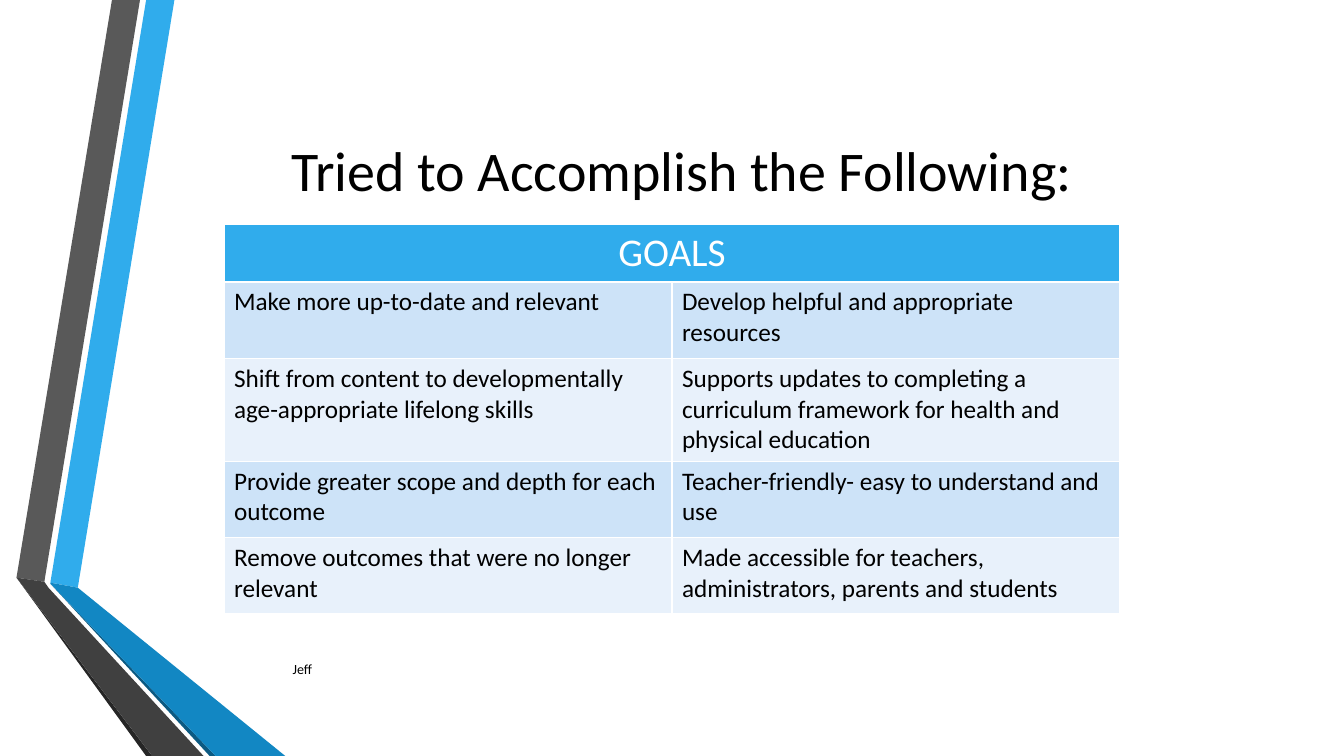
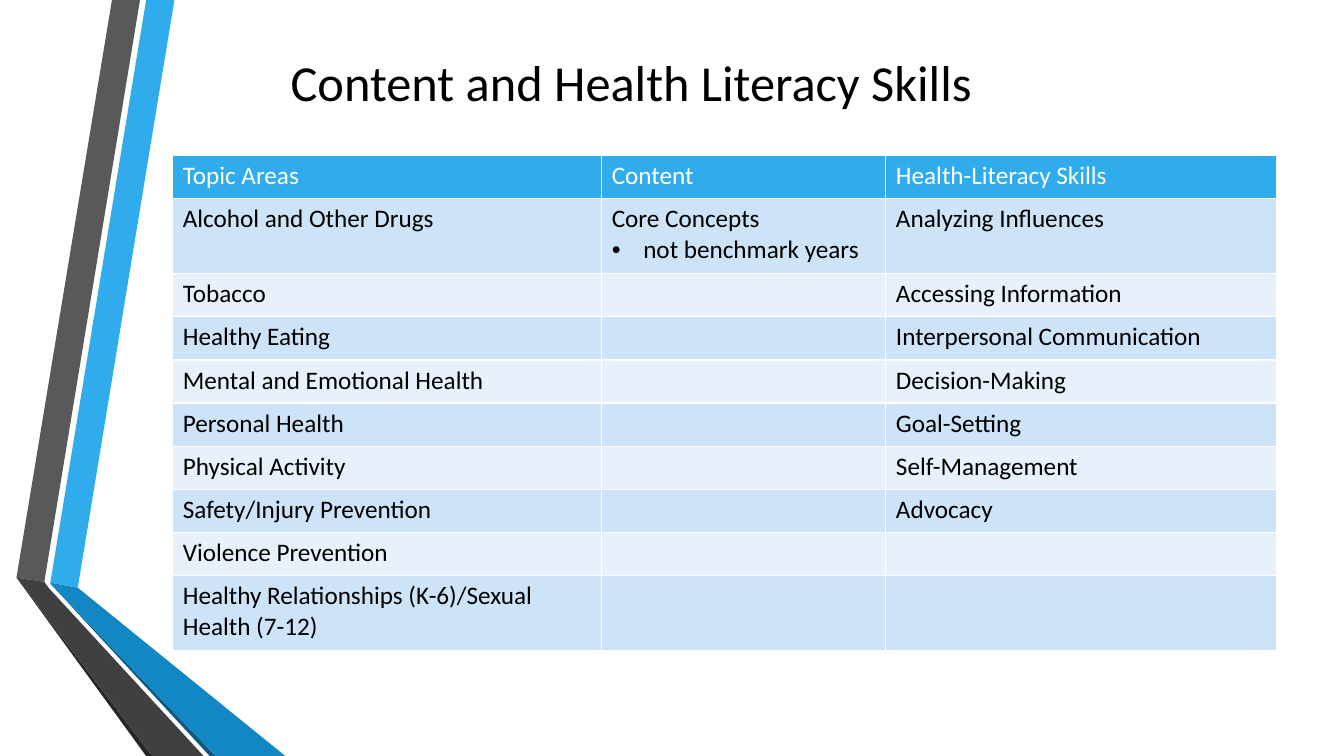
from lxml import etree
from pptx import Presentation
from pptx.dml.color import RGBColor
from pptx.enum import text
from pptx.oxml import ns
from pptx.util import Pt

FONT = "Calibri"
COLORS = {
    "black": "000000", "white": "FFFFFF", "header": "30ACEC",
    "odd": "CDE3F8", "even": "E8F1FB",
    "blue": "30ACEC", "blue_low": "1287C3", "blue_edge": "0C5A82",
    "grey": "595959", "grey_low": "404040", "grey_edge": "262626",
}
RIBBONS = [
    ("blue", [(36, 416.2), (55.6, 419.8), (124.6, 0), (104.4, 0)]),
    ("grey", [(100, 0), (80, 0), (11.8, 412.6), (31.7, 415.6)]),
    ("grey_edge", [(11.8, 412.6), (104.4, 540), (108.7, 540)]),
    ("blue_edge", [(36, 416.9), (149.8, 540), (154.1, 540)]),
    ("blue_low", [(36, 416.2), (36, 416.9), (154.1, 540), (203.8, 540), (55.6, 419.8)]),
    ("grey_low", [(145.4, 540), (34.6, 419.8), (31.7, 415.6), (11.8, 412.6), (108.7, 540)]),
]
GOALS = [
    ["GOALS", ""],
    ["Make more up-to-date and relevant", "Develop helpful and appropriate resources"],
    ["Shift from content to developmentally age-appropriate lifelong skills",
     "Supports updates to completing a curriculum framework for health and physical education"],
    ["Provide greater scope and depth for each outcome",
     "Teacher-friendly- easy to understand and use"],
    ["Remove outcomes that were no longer relevant",
     "Made accessible for teachers, administrators, parents and students"],
]
TOPICS = [
    ["Topic Areas", "Content", "Health-Literacy Skills"],
    ["Alcohol and Other Drugs", "Core Concepts\n•not benchmark years", "Analyzing Influences"],
    ["Tobacco", "", "Accessing Information"],
    ["Healthy Eating", "", "Interpersonal Communication"],
    ["Mental and Emotional Health", "", "Decision-Making"],
    ["Personal Health", "", "Goal-Setting"],
    ["Physical Activity", "", "Self-Management"],
    ["Safety/Injury Prevention", "", "Advocacy"],
    ["Violence Prevention", "", ""],
    ["Healthy Relationships (K-6)/Sexual Health (7-12)", "", ""],
]


def rgb(name):
    """Return the named colour."""
    return RGBColor.from_string(COLORS[name])


def style(paragraph, size, color="black", align=text.PP_ALIGN.LEFT):
    """Align a paragraph and format its runs."""
    paragraph.alignment = align
    for run in paragraph.runs:
        run.font.name = FONT
        run.font.size = Pt(size)
        run.font.bold = False
        run.font.color.rgb = rgb(color)


def add_text(slide, box, words, size, align=text.PP_ALIGN.LEFT):
    """Place one line of text, centred vertically in a box."""
    frame = slide.shapes.add_textbox(*map(Pt, box)).text_frame
    frame.word_wrap = True
    frame.vertical_anchor = text.MSO_ANCHOR.MIDDLE
    frame.text = words
    style(frame.paragraphs[0], size, align=align)


def add_ribbons(slide, left, top):
    """Draw the folded ribbons from a top left corner."""
    for color, points in RIBBONS:
        corners = [(Pt(left + x), Pt(top + y)) for x, y in points]
        builder = slide.shapes.build_freeform(*corners[0])
        builder.add_line_segments(corners[1:], close=True)
        ribbon = builder.convert_to_shape()
        ribbon.shadow.inherit = False
        ribbon.fill.solid()
        ribbon.fill.fore_color.rgb = rgb(color)
        ribbon.line.fill.background()


def add_borders(cell):
    """Give a cell thin white borders on all sides."""
    properties = cell._tc.get_or_add_tcPr()
    for side in ("a:lnL", "a:lnR", "a:lnT", "a:lnB"):
        line = etree.SubElement(properties, ns.qn(side), w=str(Pt(1)))
        fill = etree.SubElement(line, ns.qn("a:solidFill"))
        etree.SubElement(fill, ns.qn("a:srgbClr"), val=COLORS["white"])


def add_bullet(paragraph):
    """Turn the leading bullet sign of a paragraph into a real bullet."""
    paragraph.text = paragraph.text.lstrip("•")
    properties = paragraph._p.get_or_add_pPr()
    properties.set("marL", str(Pt(22.5)))
    properties.set("indent", str(-Pt(22.5)))
    etree.SubElement(properties, ns.qn("a:buFont"), typeface="Arial")
    etree.SubElement(properties, ns.qn("a:buChar"), char="•")


def add_grid(slide, left, top, widths, heights, rows):
    """Place a banded table with a header row."""
    box = map(Pt, (left, top, sum(widths), sum(heights)))
    table = slide.shapes.add_table(len(rows), len(widths), *box).table
    for column, width in zip(table.columns, widths):
        column.width = Pt(width)
    for r, (height, entries) in enumerate(zip(heights, rows)):
        table.rows[r].height = Pt(height)
        band = "header" if r == 0 else "odd" if r % 2 else "even"
        for c, entry in enumerate(entries):
            cell = table.cell(r, c)
            add_borders(cell)
            cell.fill.solid()
            cell.fill.fore_color.rgb = rgb(band)
            cell.text_frame.text = entry
            for paragraph in cell.text_frame.paragraphs:
                if paragraph.text.startswith("•"):
                    add_bullet(paragraph)
                style(paragraph, 18, "black" if r else "white")
    return table


def add_base(deck, title, box, size):
    """Add a slide with its ribbons and title."""
    slide = deck.slides.add_slide(deck.slide_layouts[6])
    add_ribbons(slide, 0, 0)
    add_text(slide, box, title, size, text.PP_ALIGN.CENTER)
    return slide


def add_goals_slide(deck):
    """Build the slide of goals."""
    slide = add_base(deck, "Tried to Accomplish the Following:", (123, 82, 728, 78), 40)
    add_text(slide, (202, 463, 558, 29), "Jeff", 10)
    table = add_grid(slide, 160, 160, [320] * 2, [41.4, 54.6, 73.4, 54.6, 54.6], GOALS)
    heading = table.cell(0, 0)
    heading.merge(table.cell(0, 1))
    style(heading.text_frame.paragraphs[0], 28, "white", text.PP_ALIGN.CENTER)


def add_topics_slide(deck):
    """Build the slide of topics and skills."""
    slide = add_base(deck, "Content and Health Literacy Skills", (87, 42, 728, 32), 36)
    heights = [30.8, 53.8] + [30.8] * 7 + [53.8]
    add_grid(slide, 123.4, 111, [306.4, 203, 279.2], heights, TOPICS)


def main():
    """Build and save the deck."""
    deck = Presentation()
    deck.slide_width, deck.slide_height = Pt(960), Pt(540)
    add_goals_slide(deck)
    add_topics_slide(deck)
    deck.save("out.pptx")


if __name__ == "__main__":
    main()
